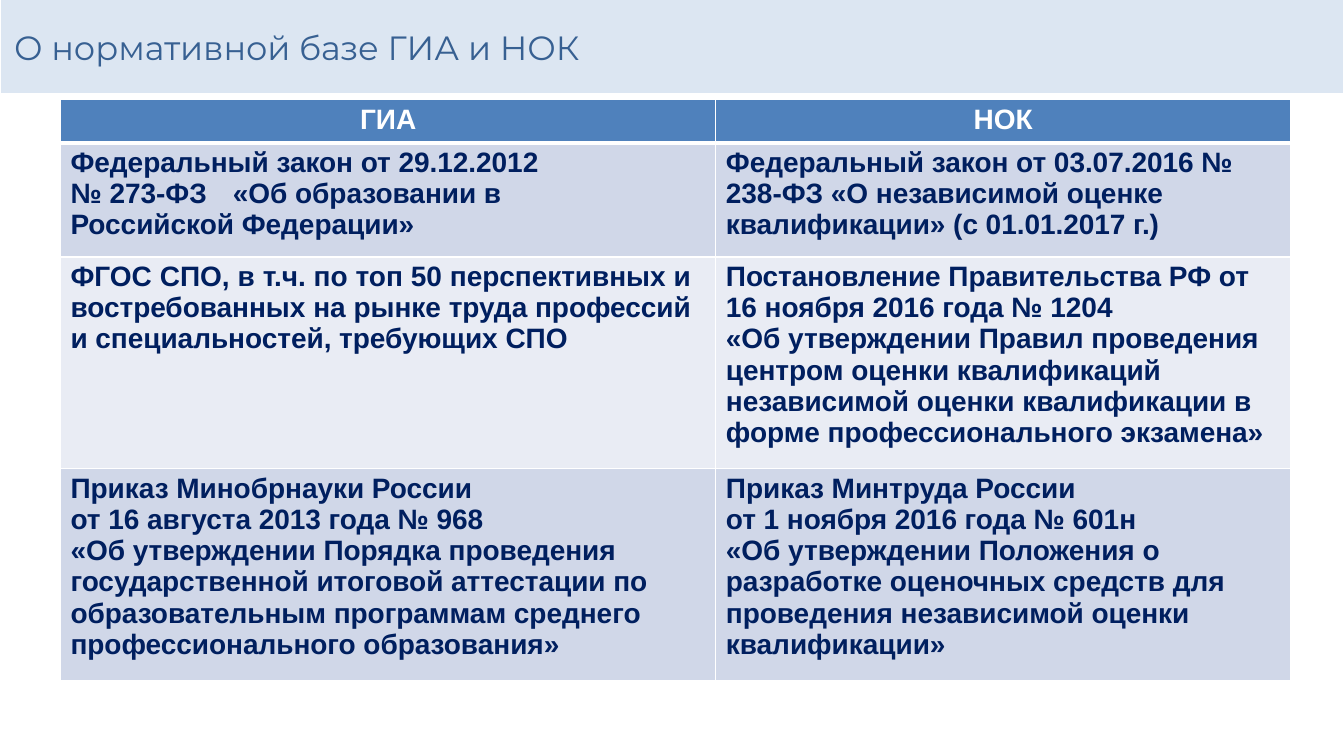
from pptx import Presentation
from pptx.dml.color import RGBColor
from pptx.enum import shapes, text
from pptx.oxml import xmlchemy
from pptx.util import Inches, Pt

WHITE, NAVY, BLUE = "FFFFFF", "001F5F", "4F81BC"
BAND_FILL, TITLE_COLOR = "DCE6F2", "376092"
ROW_FILLS = ["D0D7E8", "E9ECF4", "D0D7E8"]
COLUMN_WIDTHS = [6.5, 5.7]
ROW_HEIGHTS = [0.43, 1.13, 2.1, 2.1]
HEADERS = ["ГИА", "НОК"]
DOCUMENTS = [
    [["Федеральный закон от 29.12.2012",
      "№ 273-ФЗ\t«Об образовании в Российской Федерации»"],
     ["Федеральный закон от 03.07.2016 № 238-ФЗ «О независимой оценке "
      "квалификации» (с 01.01.2017 г.)"]],
    [["ФГОС СПО, в т.ч. по топ 50 перспективных и востребованных на рынке "
      "труда профессий и специальностей, требующих СПО"],
     ["Постановление Правительства РФ от",
      "16 ноября 2016 года № 1204",
      "«Об утверждении Правил проведения центром оценки квалификаций "
      "независимой оценки квалификации в форме профессионального экзамена»"]],
    [["Приказ Минобрнауки России",
      "от 16 августа 2013 года № 968",
      "«Об утверждении Порядка проведения государственной итоговой аттестации "
      "по образовательным программам среднего профессионального образования»"],
     ["Приказ Минтруда России",
      "от 1 ноября 2016 года № 601н",
      "«Об утверждении Положения о разработке оценочных средств для "
      "проведения независимой оценки квалификации»"]],
]
# Right margins that narrow the text of single cells: (row, column)
RIGHT_MARGINS = {(1, 0): 0.6, (2, 0): 0.25}


def color(value):
    return RGBColor.from_string(value)


def add_child(parent, tag, **attributes):
    child = parent.makeelement(xmlchemy.qn(tag), attributes)
    parent.append(child)
    return child


def write_text(frame, lines, size=20, font="Arial", fill=NAVY, bold=True,
               align=text.PP_ALIGN.LEFT, before=3, tab=None):
    for index, line in enumerate(lines):
        paragraph = frame.paragraphs[0] if index == 0 else frame.add_paragraph()
        paragraph.alignment = align
        paragraph.space_before = Pt(before if index == 0 else 0)
        if "\t" in line and tab:
            stops = add_child(paragraph._p.get_or_add_pPr(), "a:tabLst")
            add_child(stops, "a:tab", pos=str(Inches(tab)), algn="l")
        run = paragraph.add_run()
        run.text = line
        run.font.size, run.font.name, run.font.bold = Pt(size), font, bold
        run.font.color.rgb = color(fill)
        run._r.get_or_add_rPr().set("spc", "-5")


def set_borders(cell, top=1, bottom=1):
    properties = cell._tc.get_or_add_tcPr()
    for index, (side, width) in enumerate(
            [("L", 1), ("R", 1), ("T", top), ("B", bottom)]):
        line = properties.makeelement(
            xmlchemy.qn(f"a:ln{side}"), {"w": str(Pt(width))})
        add_child(add_child(line, "a:solidFill"), "a:srgbClr", val=WHITE)
        properties.insert(index, line)


def format_cell(cell, fill, left=0.0, right=0.0):
    cell.fill.solid()
    cell.fill.fore_color.rgb = color(fill)
    cell.margin_left, cell.margin_right = Inches(left), Inches(right)
    cell.margin_top, cell.margin_bottom = Inches(0.04), 0


def add_band(slide):
    band = slide.shapes.add_shape(
        shapes.MSO_SHAPE.RECTANGLE, 0, Inches(-0.03), Inches(13.33), Inches(0.97))
    band.shadow.inherit = False
    band.fill.solid()
    band.fill.fore_color.rgb = color(BAND_FILL)
    band.line.color.rgb = color(WHITE)
    band.line.width = Pt(2)
    # Keep the band behind the title
    slide.shapes.title._element.addprevious(band._element)


def set_title(slide, wording):
    title = slide.shapes.title
    title.left, title.top = Inches(0.14), Inches(0.26)
    title.width, title.height = Inches(6.31), Inches(0.43)
    frame = title.text_frame
    frame.margin_left = frame.margin_right = frame.margin_bottom = 0
    frame.margin_top = Inches(0.01)
    frame.vertical_anchor = text.MSO_ANCHOR.TOP
    frame.word_wrap = True
    write_text(frame, [wording], size=24, font="Montserrat", fill=TITLE_COLOR,
               bold=False, before=1)


def add_document_table(slide):
    table = slide.shapes.add_table(
        len(ROW_HEIGHTS), len(COLUMN_WIDTHS), Inches(0.6), Inches(0.99),
        Inches(sum(COLUMN_WIDTHS)), Inches(sum(ROW_HEIGHTS))).table
    for column, width in zip(table.columns, COLUMN_WIDTHS):
        column.width = Inches(width)
    for row, height in zip(table.rows, ROW_HEIGHTS):
        row.height = Inches(height)

    # Header row
    for column, header in enumerate(HEADERS):
        cell = table.cell(0, column)
        format_cell(cell, BLUE)
        set_borders(cell, bottom=3)
        write_text(cell.text_frame, [header], fill=WHITE,
                   align=text.PP_ALIGN.CENTER)

    # Document rows
    for row, (fill, documents) in enumerate(zip(ROW_FILLS, DOCUMENTS), start=1):
        for column, lines in enumerate(documents):
            cell = table.cell(row, column)
            format_cell(cell, fill, left=0.1,
                        right=RIGHT_MARGINS.get((row, column), 0))
            set_borders(cell, top=3 if row == 1 else 1)
            justified = (row, column) == (2, 0)
            write_text(cell.text_frame, lines, tab=1.61,
                       align=text.PP_ALIGN.JUSTIFY if justified
                       else text.PP_ALIGN.LEFT)


def main():
    presentation = Presentation()
    presentation.slide_width, presentation.slide_height = Inches(13.33), Inches(7.5)
    slide = presentation.slides.add_slide(presentation.slide_layouts[5])
    add_band(slide)
    set_title(slide, "О нормативной базе ГИА и НОК")
    add_document_table(slide)
    presentation.save("out.pptx")


if __name__ == "__main__":
    main()
